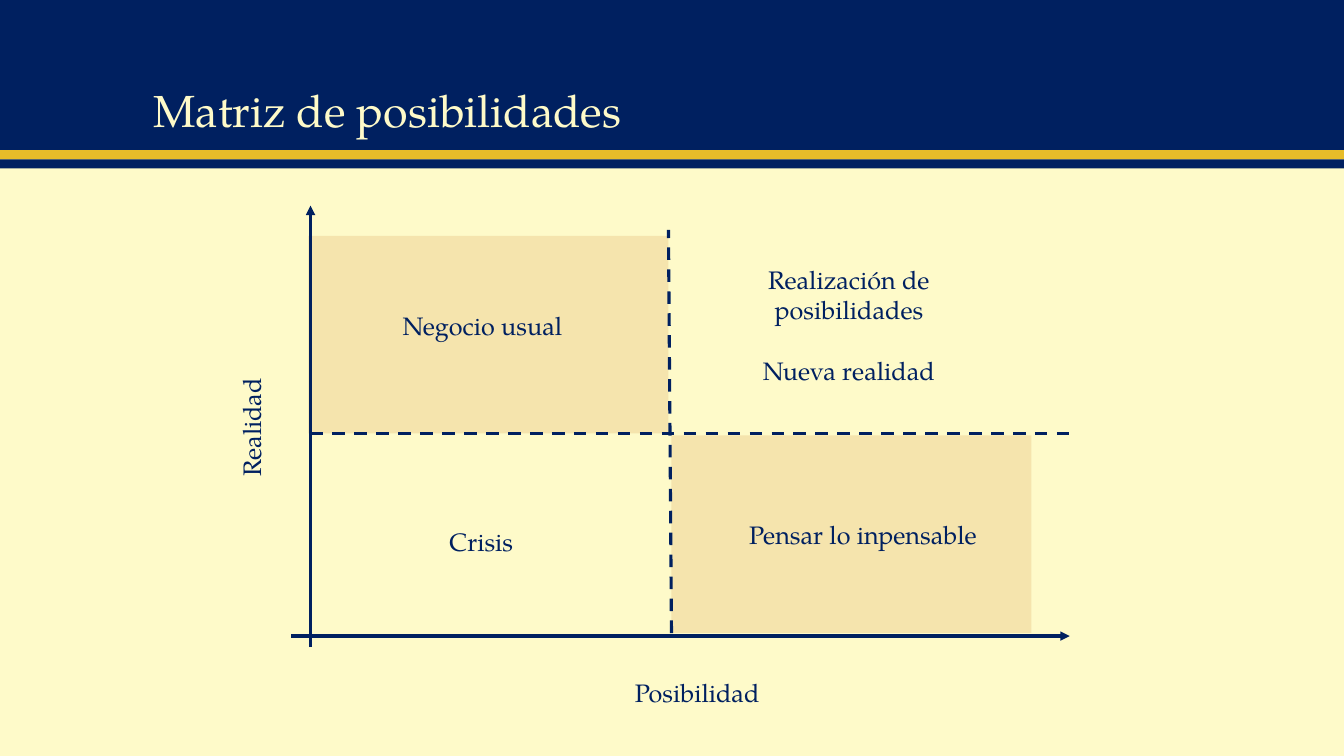
import pptx
import pptx.util
import pptx.dml.color
import pptx.enum.dml
import pptx.enum.shapes
import pptx.enum.text
import pptx.oxml
import pptx.oxml.ns

Inches = pptx.util.Inches
RGBColor = pptx.dml.color.RGBColor
Alignment = pptx.enum.text.PP_ALIGN
Anchor = pptx.enum.text.MSO_ANCHOR

NAVY = RGBColor(0x00, 0x20, 0x60)
GOLD = RGBColor(0xE7, 0xBC, 0x29)
CREAM = RGBColor(0xFE, 0xFA, 0xC9)
SAND = RGBColor(0xF5, 0xE4, 0xAD)
FONT = "TeX Gyre Pagella"


def write_text(shape, *lines, size=18, color=NAVY, align=Alignment.CENTER,
               anchor=Anchor.TOP, wrap=True, gap=0, line_spacing=None):
    frame = shape.text_frame
    frame.word_wrap = wrap
    frame.vertical_anchor = anchor
    frame.auto_size = pptx.enum.text.MSO_AUTO_SIZE.NONE
    for index, line in enumerate(lines):
        paragraph = frame.paragraphs[0] if index == 0 else frame.add_paragraph()
        paragraph.text = line
        paragraph.alignment = align
        paragraph.space_before = pptx.util.Pt(gap if index else 0)
        paragraph.line_spacing = line_spacing
        paragraph.font.name = FONT
        paragraph.font.size = pptx.util.Pt(size)
        paragraph.font.color.rgb = color


def add_label(slide, left, top, width, height, *lines, rotation=0, **text_format):
    label = slide.shapes.add_textbox(Inches(left), Inches(top), Inches(width), Inches(height))
    label.rotation = rotation
    write_text(label, *lines, **text_format)


def add_rectangle(slide, left, top, width, height, color):
    rectangle = slide.shapes.add_shape(
        pptx.enum.shapes.MSO_SHAPE.RECTANGLE,
        Inches(left), Inches(top), Inches(width), Inches(height))
    rectangle.shadow.inherit = False
    rectangle.fill.solid()
    rectangle.fill.fore_color.rgb = color
    rectangle.line.fill.background()


def add_line(slide, start, end, dashed=False):
    connector = slide.shapes.add_connector(
        pptx.enum.shapes.MSO_CONNECTOR.STRAIGHT, *map(Inches, start + end))
    connector.line.color.rgb = NAVY
    connector.line.width = pptx.util.Pt(2.25)
    if dashed:
        connector.line.dash_style = pptx.enum.dml.MSO_LINE.DASH
    else:
        arrowhead = pptx.oxml.parse_xml(
            f'<a:tailEnd {pptx.oxml.ns.nsdecls("a")} type="triangle"/>')
        connector.line._get_or_add_ln().append(arrowhead)
    effects = pptx.oxml.parse_xml(f'<a:effectLst {pptx.oxml.ns.nsdecls("a")}/>')
    connector._element.spPr.append(effects)


def add_header(slide, left, top, width, height):
    stripe = 0.09
    add_rectangle(slide, left, top, width, height - 2 * stripe, NAVY)
    add_rectangle(slide, left, top + height - 2 * stripe, width, stripe, GOLD)
    add_rectangle(slide, left, top + height - stripe, width, stripe, NAVY)
    title = slide.shapes.title
    title.left, title.top = Inches(left + 1.42), Inches(top + 0.28)
    title.width, title.height = Inches(10.5), Inches(1.13)
    write_text(title, "Matriz de posibilidades", size=32, color=CREAM,
               align=Alignment.LEFT, anchor=Anchor.BOTTOM, line_spacing=0.9)
    slide.shapes._spTree.append(title._element)


def add_matrix(slide, left, top, width, height):
    right, bottom = left + width, top + height
    axis_x, axis_y = left + 0.19, bottom - 0.11
    middle_x, middle_y = left + 3.77, top + 2.26
    cell_width, cell_height = 3.57, 1.96

    add_rectangle(slide, middle_x, middle_y + 0.02, cell_width, cell_height, SAND)
    add_rectangle(slide, middle_x - 0.03 - cell_width, middle_y - cell_height,
                  cell_width, cell_height, SAND)

    add_label(slide, left - 1.61, top + 2, 2.43, 0.4, "Realidad", rotation=270)
    add_label(slide, left + 2.81, bottom + 0.25, 2.43, 0.4, "Posibilidad")
    add_label(slide, middle_x + 0.21, top + 0.53, 3.1, 1.31,
              "Realización de posibilidades", "Nueva realidad", gap=22)
    add_label(slide, left + 0.99, top + 0.99, 1.81, 0.4, "Negocio usual", wrap=False)
    add_label(slide, left + 1.47, top + 3.13, 0.84, 0.4, "Crisis",
              wrap=False, align=Alignment.LEFT)
    add_label(slide, middle_x + 0.65, top + 3.06, 2.5, 0.4,
              "Pensar lo inpensable", wrap=False)

    add_line(slide, (left, axis_y), (right, axis_y))
    add_line(slide, (axis_x, bottom), (axis_x, top))
    add_line(slide, (axis_x, middle_y), (right, middle_y), dashed=True)
    add_line(slide, (middle_x, axis_y - 0.03), (middle_x - 0.03, top + 0.24), dashed=True)


def main():
    presentation = pptx.Presentation()
    presentation.slide_width = Inches(13.33)
    presentation.slide_height = Inches(7.5)
    slide = presentation.slides.add_slide(presentation.slide_layouts[5])
    slide.background.fill.solid()
    slide.background.fill.fore_color.rgb = CREAM
    add_header(slide, 0, 0, 13.33, 1.67)
    add_matrix(slide, 2.89, 2.04, 7.72, 4.38)
    presentation.save("out.pptx")


if __name__ == "__main__":
    main()
